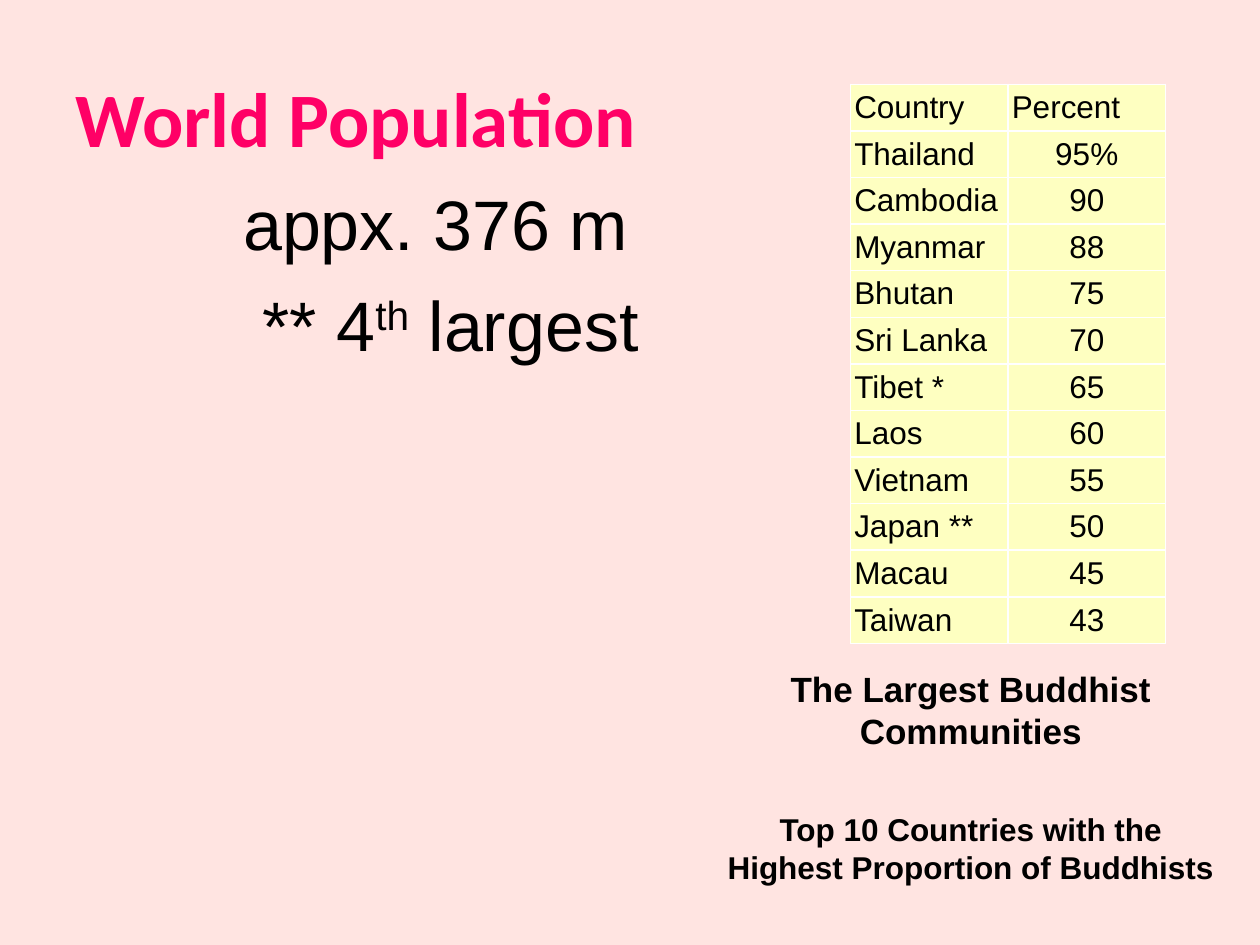
from pptx import Presentation
from pptx.dml.color import RGBColor
from pptx.enum.text import MSO_ANCHOR, PP_ALIGN
from pptx.util import Inches, Pt

MIDDLE = MSO_ANCHOR.MIDDLE
TOP = MSO_ANCHOR.TOP
CENTER = PP_ALIGN.CENTER
LEFT = PP_ALIGN.LEFT

BACKGROUND = RGBColor(0xFF, 0xE4, 0xE1)
PINK = RGBColor(0xFF, 0x00, 0x66)
BLACK = RGBColor(0x00, 0x00, 0x00)
CREAM = RGBColor(0xFE, 0xFF, 0xC1)

COUNTRIES = [
    ("Country", "Percent"),
    ("Thailand", "95%"),
    ("Cambodia", "90"),
    ("Myanmar", "88"),
    ("Bhutan", "75"),
    ("Sri Lanka", "70"),
    ("Tibet *", "65"),
    ("Laos", "60"),
    ("Vietnam", "55"),
    ("Japan **", "50"),
    ("Macau", "45"),
    ("Taiwan", "43"),
]


def add_text_frame(slide, left, top, width, height, anchor):
    box = slide.shapes.add_textbox(Inches(left), Inches(top), Inches(width), Inches(height))
    box.text_frame.word_wrap = True
    box.text_frame.vertical_anchor = anchor
    return box.text_frame


def add_run(paragraph, text, size, bold=False, color=BLACK, font="Arial"):
    run = paragraph.add_run()
    run.text = text
    run.font.name = font
    run.font.size = Pt(size)
    run.font.bold = bold
    run.font.color.rgb = color
    return run


presentation = Presentation()
presentation.slide_width = Inches(10)
presentation.slide_height = Inches(7.5)
slide = presentation.slides.add_slide(presentation.slide_layouts[6])
slide.background.fill.solid()
slide.background.fill.fore_color.rgb = BACKGROUND

# Title
title = add_text_frame(slide, 0.5, 0.3, 9, 1.25, MIDDLE)
add_run(title.paragraphs[0], "World Population", 44, True, PINK, "Calibri")

# Population figures
figures = add_text_frame(slide, 0.33, 1.33, 5, 1.75, TOP)
figures.margin_left = Inches(1.6)
figures.margin_top = Inches(0.1)
add_run(figures.paragraphs[0], "appx. 376 m", 40)
ranking = figures.add_paragraph()
ranking.space_before = Pt(10)
add_run(ranking, " ** 4", 40)
ordinal = add_run(ranking, "th", 40)
ordinal.font._element.set("baseline", "30000")
add_run(ranking, " largest", 40)

# Country table
row_height = Inches(0.37)
table = slide.shapes.add_table(
    len(COUNTRIES), 2, Inches(6.75), Inches(0.67), Inches(2.5), row_height * len(COUNTRIES)
).table
for row_index, values in enumerate(COUNTRIES):
    table.rows[row_index].height = row_height
    for column_index, value in enumerate(values):
        cell = table.cell(row_index, column_index)
        cell.fill.solid()
        cell.fill.fore_color.rgb = CREAM
        cell.vertical_anchor = MIDDLE
        cell.margin_left = cell.margin_right = Inches(0.03)
        cell.margin_top = cell.margin_bottom = Inches(0.03)
        paragraph = cell.text_frame.paragraphs[0]
        paragraph.alignment = CENTER if row_index and column_index else LEFT
        add_run(paragraph, value, 18)

# Captions under the table
captions = add_text_frame(slide, 5.58, 5.25, 4.25, 2.05, TOP)
communities = captions.paragraphs[0]
communities.alignment = CENTER
add_run(communities, "The Largest Buddhist Communities", 20, True)
proportion = captions.add_paragraph()
proportion.alignment = CENTER
proportion.space_before = Pt(33.5)
add_run(proportion, "Top 10 Countries with the", 18, True)
proportion.add_line_break()
add_run(proportion, "Highest Proportion of Buddhists", 18, True)

presentation.save("out.pptx")
